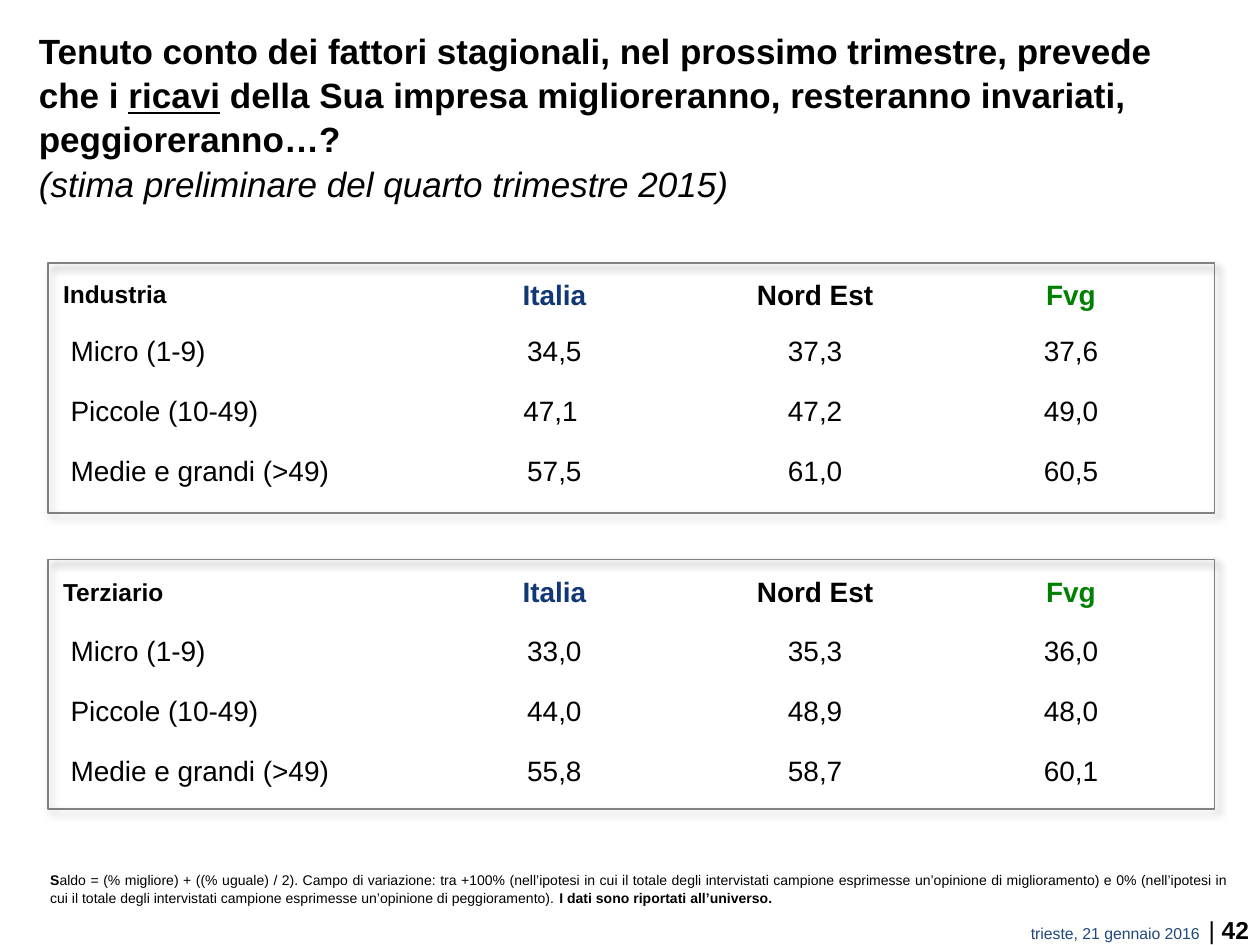
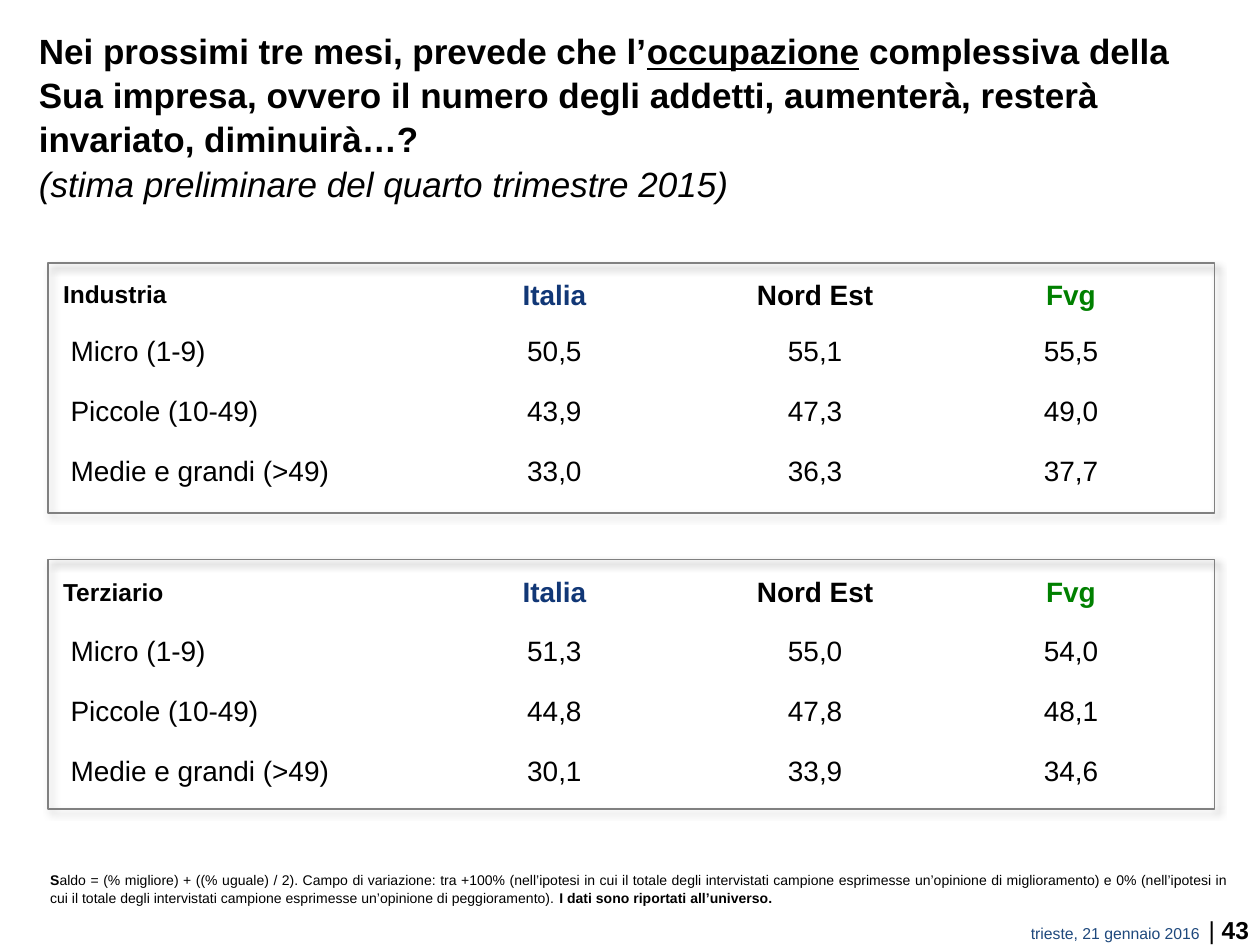
from dataclasses import dataclass

from lxml import etree
from pptx import Presentation
from pptx.dml.color import RGBColor
from pptx.enum.shapes import MSO_SHAPE
from pptx.enum.text import MSO_ANCHOR, MSO_AUTO_SIZE, PP_ALIGN
from pptx.oxml import parse_xml
from pptx.oxml.ns import nsdecls, qn
from pptx.util import Pt

LEFT, CENTER, RIGHT, JUSTIFY = PP_ALIGN.LEFT, PP_ALIGN.CENTER, PP_ALIGN.RIGHT, PP_ALIGN.JUSTIFY
TOP, MIDDLE = MSO_ANCHOR.TOP, MSO_ANCHOR.MIDDLE
NO_AUTOFIT = MSO_AUTO_SIZE.NONE
RECTANGLE = MSO_SHAPE.RECTANGLE
TITLE_ONLY = 5
PLAIN_TABLE_STYLE = "{2D5ABB26-0587-4C30-8999-92F81FD0307C}"


@dataclass(frozen=True)
class Theme:
    font: str = "Arial"
    text: str = "000000"
    date: str = "1F497D"
    italia: str = "113776"
    fvg: str = "008000"
    border: str = "808080"
    title_size: float = 20
    value_size: float = 16
    sector_size: float = 14
    page_size: float = 14
    date_size: float = 9
    note_size: float = 8


THEME = Theme()
BOLD = {"bold": True}
UNDERLINED = {"bold": True, "underline": True}
ITALIC = {"italic": True}

SUBTITLE = "(stima preliminare del quarto trimestre 2015)"
DATE = "trieste, 21 gennaio 2016  "
NOTE = [
    ("S", BOLD),
    ("aldo = (% migliore) + ((% uguale) / 2). Campo di variazione: tra +100% (nell’ipotesi in cui "
     "il totale degli intervistati campione esprimesse un’opinione di miglioramento) e 0% "
     "(nell’ipotesi in cui il totale degli intervistati campione esprimesse un’opinione di "
     "peggioramento). ", {}),
    ("I dati sono riportati all’universo.", BOLD),
]
AREAS = [("Italia", THEME.italia), ("Nord Est", THEME.text), ("Fvg", THEME.fvg)]
FIRM_SIZES = ["Micro (1-9)", "Piccole (10-49)", "Medie e grandi (>49)"]

PANEL_LEFT, PANEL_WIDTH, PANEL_HEIGHT = 27.4, 666.7, 142.6
COLUMN_WIDTHS = [214.9, 149, 149, 143.4]
ROW_HEIGHT = 34.2
# sector: (panel top, table top, header row height)
SECTORS = {"Industria": (150.5, 153.5, 30.6), "Terziario": (319.7, 322.1, 33.4)}

FIRST_PAGE = 42
QUESTIONS = [
    {
        "question": [
            ("Tenuto conto dei fattori stagionali, nel prossimo trimestre, prevede che i ", BOLD),
            ("ricavi", UNDERLINED),
            (" della Sua impresa miglioreranno, resteranno invariati, peggioreranno…?", BOLD),
        ],
        "Industria": [("34,5", "37,3", "37,6"), ("47,1 ", "47,2", "49,0"), ("57,5", "61,0", "60,5")],
        "Terziario": [("33,0", "35,3", "36,0"), ("44,0", "48,9", "48,0"), ("55,8", "58,7", "60,1")],
    },
    {
        "question": [
            ("Nei prossimi tre mesi, prevede che l’", BOLD),
            ("occupazione", UNDERLINED),
            (" complessiva della Sua impresa, ovvero il numero degli addetti, aumenterà, "
             "resterà invariato, diminuirà…?", BOLD),
        ],
        "Industria": [("50,5", "55,1", "55,5"), ("43,9", "47,3", "49,0"), ("33,0", "36,3", "37,7")],
        "Terziario": [("51,3", "55,0", "54,0"), ("44,8", "47,8", "48,1"), ("30,1", "33,9", "34,6")],
    },
]


def assign(target, values):
    for name, value in values.items():
        setattr(target, name, value)


class SurveyDeck:
    def __init__(self, theme):
        self.theme = theme
        self.prs = Presentation()
        assign(self.prs, {"slide_width": Pt(720), "slide_height": Pt(540)})
        self.slide = None

    def new_slide(self):
        self.slide = self.prs.slides.add_slide(self.prs.slide_layouts[TITLE_ONLY])

    def add_runs(self, paragraph, runs, size, align=LEFT, spacing=1.0):
        """Add (text, format) runs; a format may override the size or give a colour."""
        assign(paragraph, {"alignment": align, "line_spacing": spacing})
        for text, style in runs:
            run = paragraph.add_run()
            run.text = text
            style = {"name": self.theme.font, "size": size, "bold": False,
                     "color": self.theme.text, **style}
            run.font.color.rgb = RGBColor.from_string(style.pop("color"))
            assign(run.font, {**style, "size": Pt(style["size"])})

    def title(self, question):
        heading = self.slide.shapes.title
        assign(heading, {"left": Pt(15), "top": Pt(12.2), "width": Pt(685), "height": Pt(60.5)})
        assign(heading.text_frame, {"word_wrap": True, "auto_size": NO_AUTOFIT,
                                    "vertical_anchor": TOP})
        paragraph = heading.text_frame.paragraphs[0]
        self.add_runs(paragraph, question, self.theme.title_size, spacing=1.05)
        paragraph.add_line_break()
        self.add_runs(paragraph, [(SUBTITLE, ITALIC)], self.theme.title_size, spacing=1.05)

    def text(self, box, runs, size, **layout):
        frame = self.slide.shapes.add_textbox(*map(Pt, box)).text_frame
        assign(frame, {"word_wrap": True, "vertical_anchor": MIDDLE})
        self.add_runs(frame.paragraphs[0], runs, size, **layout)

    def panel(self, top):
        panel = self.slide.shapes.add_shape(
            RECTANGLE, Pt(PANEL_LEFT), Pt(top), Pt(PANEL_WIDTH), Pt(PANEL_HEIGHT))
        panel.fill.background()
        panel.line.color.rgb = RGBColor.from_string(self.theme.border)
        panel.line.width = Pt(1)
        panel._element.spPr.append(parse_xml(
            f'<a:effectLst {nsdecls("a")}><a:outerShdw blurRad="{Pt(4)}" dist="{Pt(3)}" '
            f'dir="2700000" algn="tl" rotWithShape="0"><a:srgbClr val="{self.theme.text}">'
            '<a:alpha val="40000"/></a:srgbClr></a:outerShdw></a:effectLst>'))

    def cell(self, cell, run, size, align=CENTER, indent=0):
        cell.fill.background()
        assign(cell, {"margin_left": Pt(indent), "margin_right": 0, "margin_top": 0,
                      "margin_bottom": 0, "vertical_anchor": MIDDLE})
        self.add_runs(cell.text_frame.paragraphs[0], [run], size, align)

    def balance_table(self, sector, top, header_height, values):
        heights = [header_height] + [ROW_HEIGHT] * len(FIRM_SIZES)
        table = self.slide.shapes.add_table(
            len(heights), len(COLUMN_WIDTHS), Pt(PANEL_LEFT), Pt(top),
            Pt(sum(COLUMN_WIDTHS)), Pt(sum(heights))).table
        assign(table, {"first_row": False, "horz_banding": False})
        properties = table._tbl.tblPr
        style = properties.find(qn("a:tableStyleId"))
        if style is None:
            style = etree.SubElement(properties, qn("a:tableStyleId"))
        style.text = PLAIN_TABLE_STYLE
        for column, width in zip(table.columns, COLUMN_WIDTHS):
            column.width = Pt(width)
        for row, height in zip(table.rows, heights):
            row.height = Pt(height)

        size = self.theme.value_size
        self.cell(table.cell(0, 0), (sector, BOLD), self.theme.sector_size, LEFT, 8.6)
        for col, (area, color) in enumerate(AREAS, 1):
            self.cell(table.cell(0, col), (area, {"bold": True, "color": color}), size)
        for row, (firm_size, balances) in enumerate(zip(FIRM_SIZES, values), 1):
            self.cell(table.cell(row, 0), (firm_size, {}), size, LEFT, 12.9)
            for col, balance in enumerate(balances, 1):
                self.cell(table.cell(row, col), (balance, {}), size)

    def footer(self, page):
        date_style = {"size": self.theme.date_size, "color": self.theme.date}
        self.text((221.8, 519, 499, 24), [(DATE, date_style), ("| ", {}), (str(page), BOLD)],
                  self.theme.page_size, align=RIGHT)


def main():
    deck = SurveyDeck(THEME)
    for page, survey in enumerate(QUESTIONS, FIRST_PAGE):
        deck.new_slide()
        deck.title(survey["question"])
        for sector, (panel_top, table_top, header_height) in SECTORS.items():
            deck.panel(panel_top)
            deck.balance_table(sector, table_top, header_height, survey[sector])
        deck.text((21.6, 493.2, 688.3, 28.8), NOTE, THEME.note_size, align=JUSTIFY, spacing=1.1)
        deck.footer(page)
    deck.prs.save("out.pptx")


if __name__ == "__main__":
    main()
